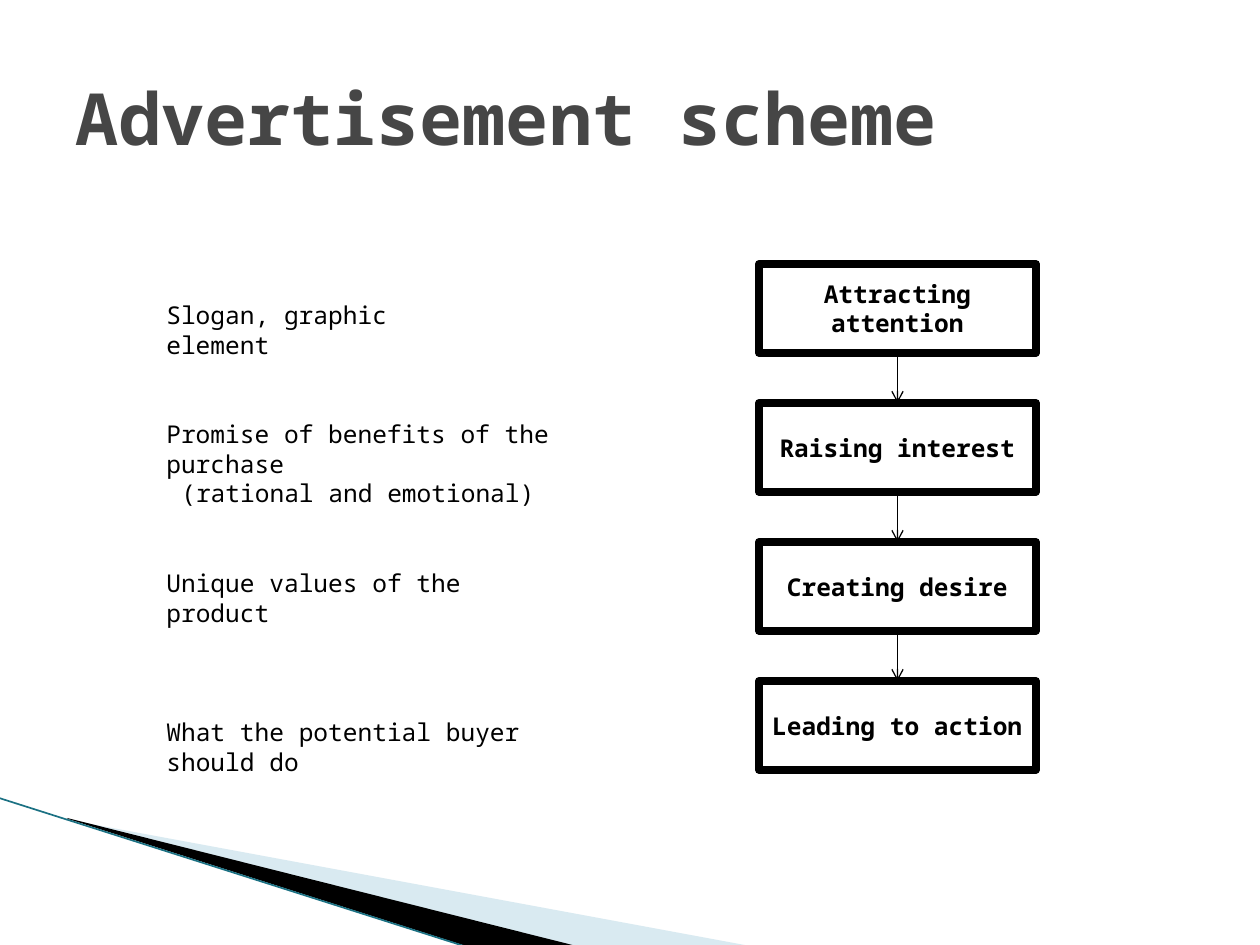
import pptx
import pptx.util
import pptx.dml.color
import pptx.enum.shapes
import pptx.enum.text
import pptx.oxml
import pptx.oxml.ns
import lxml.etree

RGBColor = pptx.dml.color.RGBColor
ANCHOR = pptx.enum.text.MSO_ANCHOR
ALIGN = pptx.enum.text.PP_ALIGN
SHAPES = pptx.enum.shapes.MSO_SHAPE
CONNECTORS = pptx.enum.shapes.MSO_CONNECTOR
qn = pptx.oxml.ns.qn

PX = 914400 / 126
FONT = "Noto Sans Mono"
WHITE = RGBColor(0xFF, 0xFF, 0xFF)
BLACK = RGBColor(0, 0, 0)
GREY = RGBColor(0x46, 0x46, 0x46)
PALE_BLUE = RGBColor(0xA0, 0xCB, 0xDC)
TEAL = RGBColor(0x1B, 0x71, 0x83)

STEPS = ["Attracting attention", "Raising interest", "Creating desire", "Leading to action"]
NOTES = [
    (0, 315, ["Slogan, graphic element"]),
    (119, 452, ["Promise of benefits of the purchase", "(rational and emotional)"]),
    (268, 373, ["Unique values of the product"]),
    (417, 446, ["What the potential buyer should do"]),
]


def px(*lengths):
    return [pptx.util.Emu(round(n * PX)) for n in lengths]


def write(tf, lines, size, color=BLACK, bold=False, align=ALIGN.LEFT, anchor=ANCHOR.TOP):
    tf.word_wrap = True
    tf.auto_size = pptx.enum.text.MSO_AUTO_SIZE.NONE
    tf.vertical_anchor = anchor
    for i, line in enumerate(lines):
        p = tf.add_paragraph() if i else tf.paragraphs[0]
        p.alignment = align
        r = p.add_run()
        r.text = line
        r.font.color.rgb = color
        for name, value in {"name": FONT, "size": pptx.util.Pt(size), "bold": bold}.items():
            setattr(r.font, name, value)


def add_line(s, x1, y1, x2, y2, color, width):
    line = s.shapes.add_connector(CONNECTORS.STRAIGHT, *px(x1, y1, x2, y2))
    line.line.color.rgb = color
    line.line.width = pptx.util.Pt(width)
    lxml.etree.SubElement(line._element.spPr, qn("a:effectLst"))
    return line


def add_wedge(s, points, color, opacity=100):
    builder = s.shapes.build_freeform(*points[0], scale=PX)
    builder.add_line_segments(points[1:], close=True)
    sp = builder.convert_to_shape()
    sp.shadow.inherit = False
    sp.fill.solid()
    sp.fill.fore_color.rgb = color
    sp.line.fill.background()
    if opacity < 100:
        clr = sp._element.spPr.find(qn("a:solidFill"))[0]
        lxml.etree.SubElement(clr, qn("a:alpha"), val=str(opacity * 1000))


def corner(s, x, y):
    pale = [(69, 22), (750, 148), (575, 148), (69, 21)]
    dark = [(67, 20), (576, 148), (469, 149), (68, 21)]
    add_wedge(s, [(x + dx, y + dy) for dx, dy in pale], PALE_BLUE, 40)
    add_wedge(s, [(x + dx, y + dy) for dx, dy in dark], BLACK)
    add_line(s, x - 1, y, x + 467, y + 149, TEAL, 0.95)


def title(s, x, y, w, h):
    sp = s.shapes.title
    sp.left, sp.top, sp.width, sp.height = px(x, y, w, h)
    write(sp.text_frame, ["Advertisement scheme"], 41, GREY, True, anchor=ANCHOR.MIDDLE)


def flow(s, x, y, w, h, pitch):
    boxes = []
    for i, step in enumerate(STEPS):
        sp = s.shapes.add_shape(SHAPES.RECTANGLE, *px(x, y + i * pitch, w, h))
        sp.shadow.inherit = False
        sp.fill.solid()
        sp.fill.fore_color.rgb = WHITE
        sp.line.color.rgb = BLACK
        sp.line.width = pptx.util.Pt(4.33)
        tf = sp.text_frame
        tf.margin_left, tf.margin_right = px(8, 8)
        write(tf, [step], 14, bold=True, align=ALIGN.CENTER, anchor=ANCHOR.MIDDLE)
        boxes.append(sp)
    for upper, lower in zip(boxes, boxes[1:]):
        arrow = add_line(s, 0, 0, 0, 0, BLACK, 0.75)
        arrow.begin_connect(upper, 2)
        arrow.end_connect(lower, 0)
        ln = arrow._element.spPr.find(qn("a:ln"))
        lxml.etree.SubElement(ln, qn("a:tailEnd"), type="arrow")


def notes(s, x, y):
    for dy, w, lines in NOTES:
        sp = s.shapes.add_textbox(*px(x, y + dy, w, 13 + 30 * len(lines)))
        write(sp.text_frame, lines, 14)
        for p in sp.text_frame.paragraphs[1:]:
            p._p.get_or_add_pPr().set("marL", str(px(15)[0]))


def main():
    prs = pptx.Presentation()
    prs.slide_width, prs.slide_height = px(1260, 945)
    s = prs.slides.add_slide(prs.slide_layouts[5])
    corner(s, 0, 798)
    title(s, 63, 38, 1134, 158)
    flow(s, 759, 264, 277, 89, 139)
    notes(s, 154, 294)
    prs.save("out.pptx")


if __name__ == "__main__":
    main()
